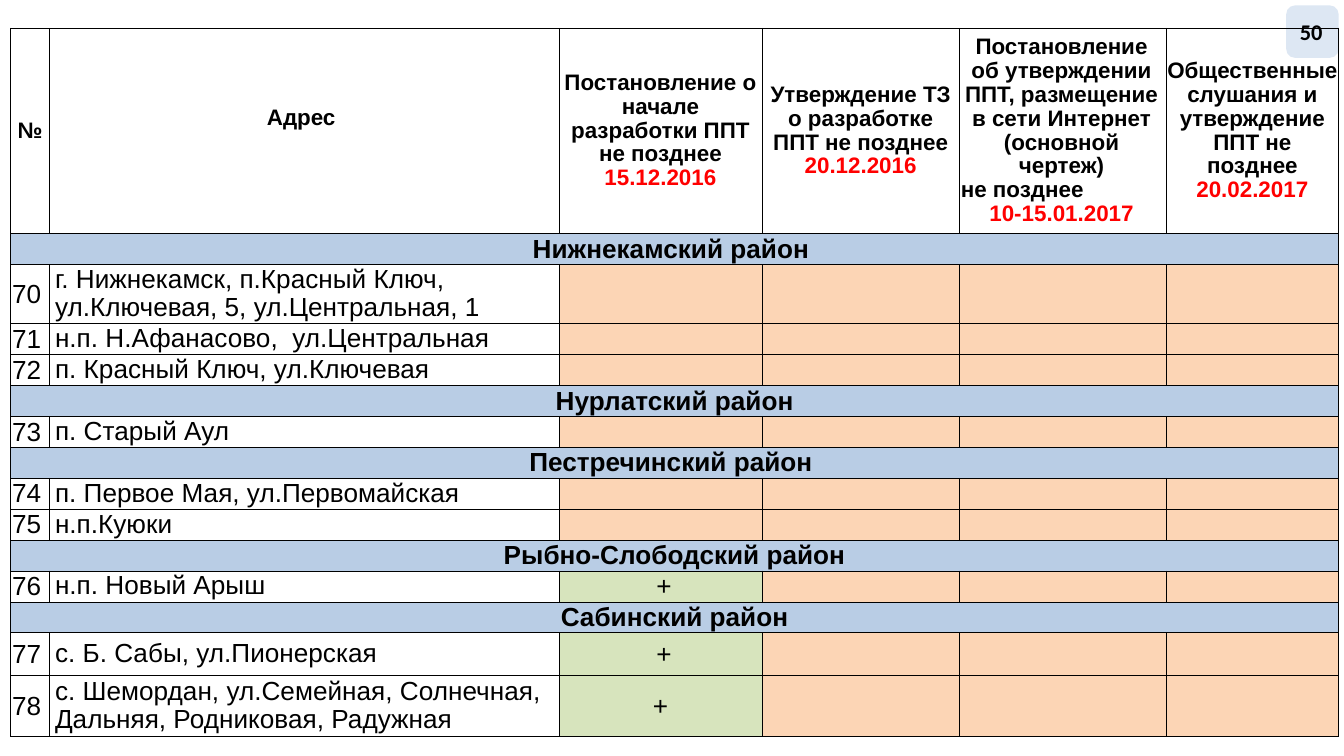
from lxml.etree import SubElement
from pptx import Presentation
from pptx.dml.color import RGBColor
from pptx.enum.shapes import MSO_SHAPE
from pptx.enum.text import MSO_ANCHOR, PP_ALIGN
from pptx.oxml import parse_xml
from pptx.oxml.ns import nsdecls, qn
from pptx.util import Inches, Pt

BLACK, RED, WHITE = "000000", "FF0000", "FFFFFF"
BLUE, PEACH, GREEN = "B9CDE5", "FCD5B5", "D7E4BD"
LEFT, MID = PP_ALIGN.LEFT, PP_ALIGN.CENTER
COLS = [0.29, 3.79, 1.51, 1.47, 1.54, 1.28]
HEAD_TALL, ROW_TALL = 1.53, 0.23
FLUSH = (0, 0, 0, 0)

HEADS = [
    ([("№", MID)], FLUSH),
    ([("Адрес ", MID)], (0, 0, 0, 0.19)),
    ([("Постановление о начале разработки ППТ не позднее ", MID, "15.12.2016")], FLUSH),
    ([("Утверждение ТЗ о разработке ППТ не позднее ", MID, "20.12.2016")],
     (0.02, 0, 0.02, 0)),
    ([("Постановление об утверждении ППТ, размещение в сети Интернет "
       "(основной чертеж)", MID),
      ("не позднее", LEFT),
      ("", MID, "10-15.01.2017")], (0.01, 0, 0.03, 0)),
    ([("Общественные слушания и утверждение ППТ не позднее ", MID, "20.02.2017")], FLUSH),
]

AREAS = {
    "Нижнекамский район ": [
        ("г. Нижнекамск, п.Красный Ключ, ул.Ключевая, 5, ул.Центральная, 1", 0.44, ""),
        ("н.п. Н.Афанасово,  ул.Центральная", ROW_TALL, ""),
        ("п. Красный Ключ, ул.Ключевая", ROW_TALL, ""),
    ],
    "Нурлатский район": [("п. Старый Аул", ROW_TALL, "")],
    "Пестречинский район ": [
        ("п. Первое Мая, ул.Первомайская", ROW_TALL, ""),
        ("н.п.Куюки", ROW_TALL, ""),
    ],
    "Рыбно-Слободский район": [("н.п. Новый Арыш", ROW_TALL, " +")],
    "Сабинский район": [
        ("с. Б. Сабы, ул.Пионерская", 0.32, " +"),
        ("с. Шемордан, ул.Семейная, Солнечная, Дальняя, Родниковая, Радужная", 0.45, "+"),
    ],
}


def paint(color):
    """Turn a hex string into a colour."""
    return RGBColor.from_string(color)


def style(para, size, name="Arial", bold=False, align=LEFT):
    """Format a whole paragraph, its end mark included."""
    para.alignment = align
    font = para.font
    font.size, font.name, font.bold = Pt(size), name, bold
    font.color.rgb = paint(BLACK)
    SubElement(para._p, qn("a:endParaRPr"), sz=str(size * 100))


def frame(cell):
    """Draw thin black lines on all four sides of a cell."""
    props = cell._tc.get_or_add_tcPr()
    for spot, side in enumerate("LRTB"):
        props.insert(spot, parse_xml(
            f'<a:ln{side} {nsdecls("a")} w="6350"><a:solidFill>'
            f'<a:srgbClr val="{BLACK}"/></a:solidFill></a:ln{side}>'))


def fill_cell(cell, lines, size=14, bold=False, color=None, pad=(0.01, 0.01, 0.01, 0)):
    """Write (text, align, red date) lines into a framed cell."""
    cell.vertical_anchor = MSO_ANCHOR.MIDDLE
    cell.margin_left, cell.margin_top, cell.margin_right, cell.margin_bottom = map(Inches, pad)
    if color:
        cell.fill.solid()
        cell.fill.fore_color.rgb = paint(color)
    else:
        cell.fill.background()
    frame(cell)
    text = cell.text_frame
    for spot, (words, align, *date) in enumerate(lines):
        para = text.add_paragraph() if spot else text.paragraphs[0]
        para.line_spacing = 0.95
        if words:
            para.add_run().text = words
        for day in date:
            run = para.add_run()
            run.text = day
            run.font.color.rgb = paint(RED)
        style(para, size, bold=bold, align=align)


def add_badge(slide, left, top, side):
    """Add the rounded page number badge."""
    badge = slide.shapes.add_shape(
        MSO_SHAPE.ROUNDED_RECTANGLE, *map(Inches, (left, top, side, side)))
    badge.shadow.inherit = False
    badge.fill.solid()
    badge.fill.fore_color.rgb = paint("DDE7F3")
    badge.line.fill.background()
    text = badge.text_frame
    text.vertical_anchor = MSO_ANCHOR.MIDDLE
    text.margin_left, text.margin_right = Inches(0.08), Inches(0.1)
    para = text.paragraphs[0]
    para.add_run().text = "50"
    style(para, 12, "Calibri", True, MID)


def add_plan(slide, left, top, first):
    """Add the schedule table, numbering addresses from first."""
    rows = []
    for area, sites in AREAS.items():
        rows.append((area, ROW_TALL, None))
        rows.extend(sites)
    talls = [HEAD_TALL] + [tall for _, tall, _ in rows]
    table = slide.shapes.add_table(
        len(talls), len(COLS),
        *map(Inches, (left, top, sum(COLS), sum(talls)))).table
    table.first_row = table.horz_banding = False
    for col, wide in zip(table.columns, COLS):
        col.width = Inches(wide)
    for row, tall in zip(table.rows, talls):
        row.height = Inches(tall)

    for col, (lines, pad) in enumerate(HEADS):
        fill_cell(table.cell(0, col), lines, 12, True, pad=pad)

    number = first
    for spot, (words, _, mark) in enumerate(rows, 1):
        cells = [table.cell(spot, col) for col in range(len(COLS))]
        if mark is None:
            cells[0].merge(cells[-1])
            fill_cell(cells[0], [(words, MID)], bold=True, color=BLUE)
            for cell in cells[1:]:
                frame(cell)
            continue
        fill_cell(cells[0], [(str(number), LEFT)], color=WHITE)
        fill_cell(cells[1], [(words, LEFT)], color=WHITE, pad=(0.04, 0, 0, 0))
        fill_cell(cells[2], [(mark, MID)], color=GREEN if mark else PEACH)
        for cell in cells[3:]:
            fill_cell(cell, [("", MID)], color=PEACH)
        number += 1


def main():
    """Build the slide and save it."""
    deck = Presentation()
    deck.slide_width, deck.slide_height = Inches(10), Inches(10 * 9 / 16)
    slide = deck.slides.add_slide(deck.slide_layouts[6])
    add_badge(slide, 9.57, 0.04, 0.39)
    add_plan(slide, 0.08, 0.21, 70)
    deck.save("out.pptx")


if __name__ == "__main__":
    main()
